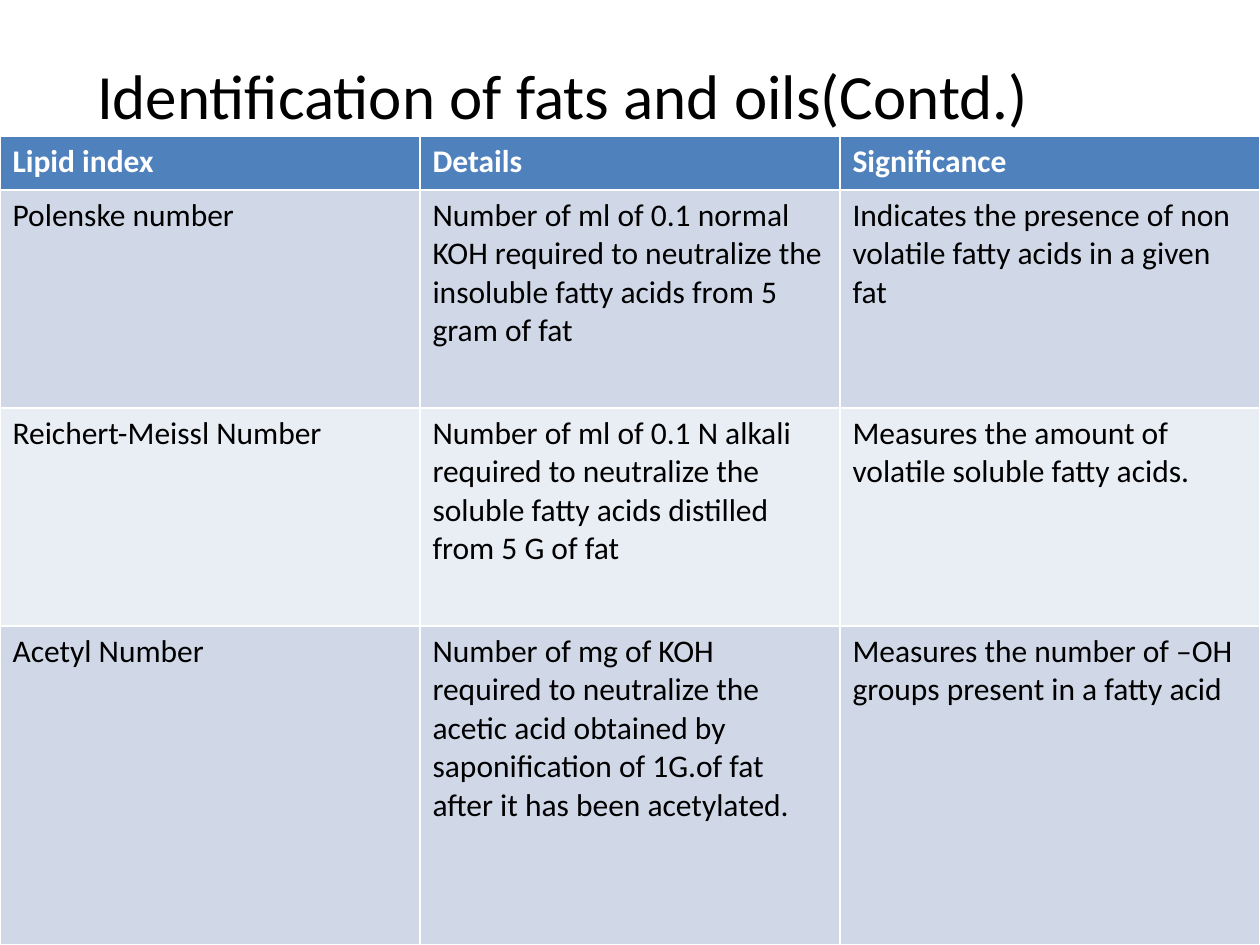
import pptx
import pptx.util
import pptx.dml.color
import pptx.enum.text

Inches, Pt = pptx.util.Inches, pptx.util.Pt
MSO_ANCHOR = pptx.enum.text.MSO_ANCHOR
PP_ALIGN = pptx.enum.text.PP_ALIGN

COLORS = {
    "text": "000000",
    "header": "4F81BD",
    "header_text": "FFFFFF",
    "odd_row": "D0D8E8",
    "even_row": "E9EDF4",
}
ROWS = [
    ("Lipid index", "Details", "Significance"),
    ("Polenske number",
     "Number of ml of 0.1 normal KOH required to neutralize the insoluble "
     "fatty acids from 5 gram of fat",
     "Indicates the presence of non volatile fatty acids in a given fat"),
    ("Reichert-Meissl Number",
     "Number of ml of 0.1 N alkali required to neutralize the soluble fatty "
     "acids distilled from 5 G of fat",
     "Measures the amount of volatile soluble fatty acids."),
    ("Acetyl Number",
     "Number of mg of KOH required to neutralize the acetic acid obtained by "
     "saponification of 1G.of fat after it has been acetylated.",
     "Measures the number of –OH groups present in a fatty acid"),
]
ROW_HEIGHTS = [0.43, 1.73, 1.73, 2.53]


def rgb(name):
    return pptx.dml.color.RGBColor.from_string(COLORS[name])


class SlideBuilder:
    """Holds the text style and the current slide."""

    font = "Calibri"

    def __init__(self, prs, layout):
        self.s = prs.slides.add_slide(prs.slide_layouts[layout])

    def style(self, p, size, color, bold=False):
        formats = {"name": self.font, "size": Pt(size), "bold": bold}
        for r in p.runs:
            for key, value in formats.items():
                setattr(r.font, key, value)
            r.font.color.rgb = rgb(color)

    def title(self, text, left, top, width, height):
        sp = self.s.shapes.title
        box = {"left": left, "top": top, "width": width, "height": height}
        for key, value in box.items():
            setattr(sp, key, Inches(value))
        tf = sp.text_frame
        tf.text = text
        tf.auto_size = pptx.enum.text.MSO_AUTO_SIZE.NONE
        tf.vertical_anchor = MSO_ANCHOR.MIDDLE
        p = tf.paragraphs[0]
        p.alignment = PP_ALIGN.LEFT
        self.style(p, 36, "text")

    def table(self, rows, heights, left, top, width):
        """Add a banded table; its built-in style draws the white rules."""
        table = self.s.shapes.add_table(
            len(rows), len(rows[0]), Inches(left), Inches(top),
            Inches(width), Inches(sum(heights))).table
        for i, (texts, height) in enumerate(zip(rows, heights)):
            table.rows[i].height = Inches(height)
            header = i == 0
            fill = "header" if header else "odd_row" if i % 2 else "even_row"
            for j, text in enumerate(texts):
                cell = table.cell(i, j)
                cell.text = text
                cell.fill.solid()
                cell.fill.fore_color.rgb = rgb(fill)
                self.style(cell.text_frame.paragraphs[0], 18,
                           "header_text" if header else "text", header)

    def remove_empty_placeholders(self):
        for sp in list(self.s.placeholders):
            if not sp.text_frame.text:
                sp.element.getparent().remove(sp.element)


def main():
    prs = pptx.Presentation()
    prs.slide_width, prs.slide_height = Inches(10), Inches(7.5)
    slide = SlideBuilder(prs, layout=0)
    slide.title("Identification of fats and oils(Contd.)", 0.67, 0.33, 8.5, 0.83)
    slide.table(ROWS, ROW_HEIGHTS, 0, 1.08, 10)
    slide.remove_empty_placeholders()
    prs.save("out.pptx")


if __name__ == "__main__":
    main()
